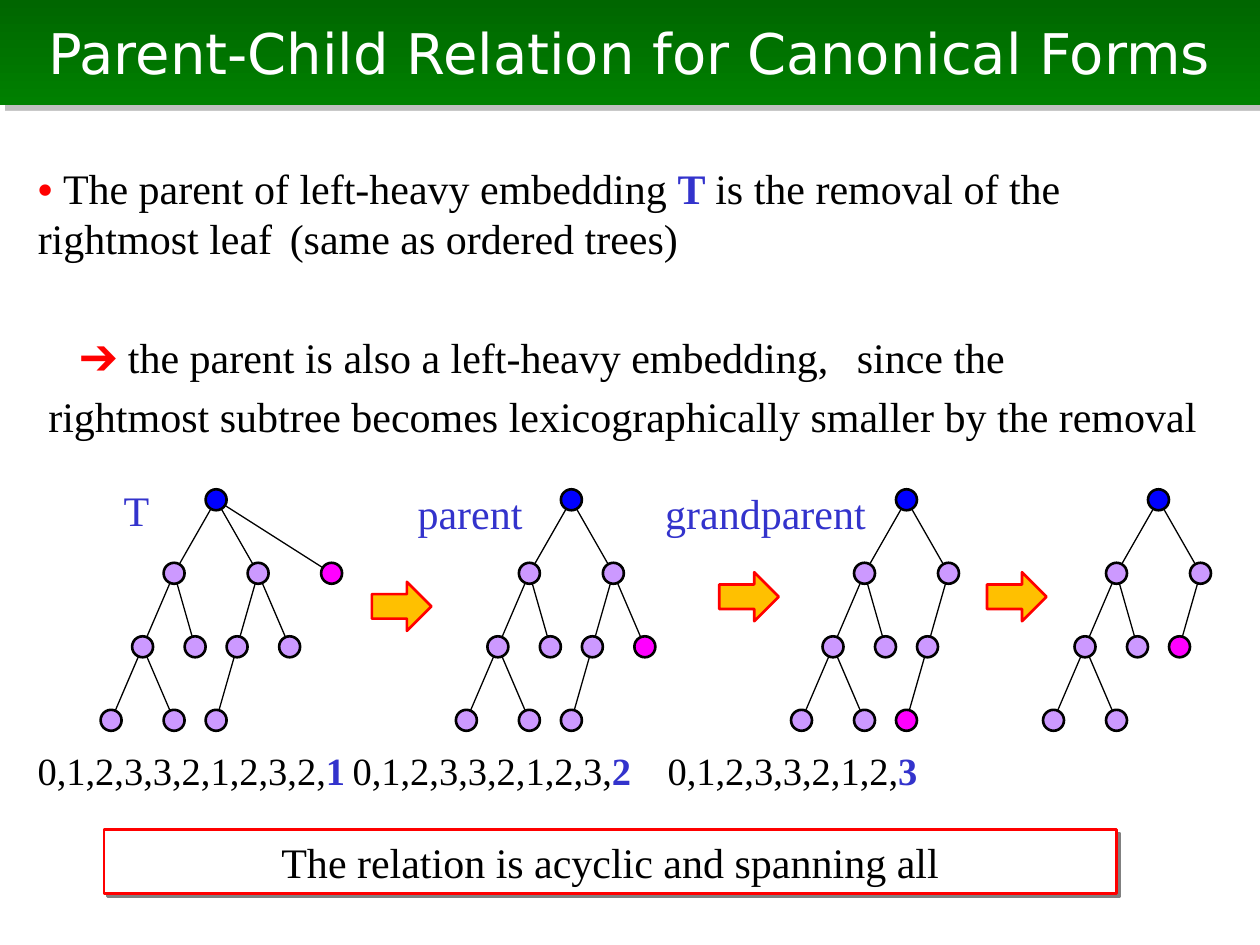
from lxml.etree import SubElement
from pptx import Presentation
from pptx.dml.color import RGBColor
from pptx.enum.shapes import MSO_CONNECTOR, MSO_SHAPE
from pptx.enum.text import MSO_ANCHOR, MSO_AUTO_SIZE, PP_ALIGN
from pptx.oxml.ns import qn
from pptx.util import Pt

BLACK, BLUE, RED, WHITE = "000000", "3333CC", "FF0000", "FFFFFF"
ROOT, NODE, LAST = "0000FF", "CC99FF", "FF00FF"
DEPTHS = [0, 1, 2, 3, 3, 2, 1, 2, 3, 2, 1]
SHIFTS = [0, -24, -42, -60, -24, -12, 24, 12, 0, 42, 66]
TREES = [(123.5, 11), (326.5, 10), (518, 9), (662, 8)]
LABELS = [("T", 63.5, 273.5, 29), ("parent", 231.5, 275, 74), ("grandparent", 373, 275, 129)]
ARROWS = [(212.5, 332.5), (411, 327), (564, 327)]


def tint(color, code):
    """Set a colour from a hex string."""
    color.rgb = RGBColor.from_string(code)


def apply(target, values):
    """Set each value of a dict as an attribute."""
    for name, value in values.items():
        setattr(target, name, value)


class Deck:
    """Holds the style and the current slide."""

    face = "Times New Roman"
    frame = {"word_wrap": True, "auto_size": MSO_AUTO_SIZE.NONE,
             "vertical_anchor": MSO_ANCHOR.TOP}

    def __init__(self):
        """Start a deck with one title slide."""
        self.show = Presentation()
        apply(self.show, {"slide_width": Pt(720), "slide_height": Pt(540)})
        self.slide = self.show.slides.add_slide(self.show.slide_layouts[0])
        self.shapes = self.slide.shapes

    def place(self, shape, box):
        """Move a shape to left, top, width, height."""
        apply(shape, dict(zip(("left", "top", "width", "height"), map(Pt, box))))

    def shade(self, shape, dist, alpha):
        """Give a shape a hard grey shadow."""
        shape.shadow.inherit = False
        effects = shape._element.spPr.find(qn("a:effectLst"))
        outer = SubElement(effects, qn("a:outerShdw"), dist=str(Pt(dist)),
                           dir="2700000", algn="ctr", rotWithShape="0")
        grey = SubElement(outer, qn("a:srgbClr"), val="808080")
        SubElement(grey, qn("a:alpha"), val=str(alpha * 1000))

    def letter(self, para, runs, size=24, face=None, align=PP_ALIGN.LEFT,
               before=0, indent=0, tabs=()):
        """Fill a paragraph with runs of text, colour and weight."""
        apply(para, {"alignment": align, "space_before": Pt(before)})
        props = para._p.get_or_add_pPr()
        props.set("marL", "0")
        props.set("indent", str(Pt(indent)))
        if tabs:
            stops = SubElement(props, qn("a:tabLst"))
            for stop in tabs:
                SubElement(stops, qn("a:tab"), pos=str(Pt(stop)), algn="l")
        for text, code, bold in runs:
            run = para.add_run()
            run.text = text
            apply(run.font, {"size": Pt(size), "name": face or self.face, "bold": bold})
            tint(run.font.color, code)

    def title(self, text, box):
        """Put the title on a green band."""
        shape = self.shapes.title
        self.place(shape, box)
        shape.fill.gradient()
        shape.fill.gradient_angle = 270
        for stop, code in zip(shape.fill.gradient_stops, ("006600", "008000")):
            tint(stop.color, code)
        self.shade(shape, 4.2, 50)
        apply(shape.text_frame, {**self.frame, "vertical_anchor": MSO_ANCHOR.MIDDLE})
        self.letter(shape.text_frame.paragraphs[0], [(text, WHITE, False)], 32,
                    "DejaVu Sans", PP_ALIGN.CENTER)

    def body(self, items, box):
        """Put the list in the body placeholder."""
        shape = self.slide.placeholders[1]
        self.place(shape, box)
        apply(shape.text_frame, self.frame)
        for i, (runs, style) in enumerate(items):
            para = shape.text_frame.add_paragraph() if i else shape.text_frame.paragraphs[0]
            self.letter(para, runs, **style)

    def text(self, runs, box, wrap=True, **style):
        """Add a text box."""
        frame = self.shapes.add_textbox(*map(Pt, box)).text_frame
        apply(frame, {**self.frame, "word_wrap": wrap})
        self.letter(frame.paragraphs[0], runs, **style)

    def shape(self, kind, box, fill, line):
        """Add a filled shape with an outline."""
        shape = self.shapes.add_shape(kind, *map(Pt, box))
        shape.shadow.inherit = False
        shape.fill.solid()
        tint(shape.fill.fore_color, fill)
        shape.line.width = Pt(1.5)
        tint(shape.line.color, line)
        return shape

    def note(self, text, box):
        """Add a framed note with a shadow."""
        shape = self.shape(MSO_SHAPE.RECTANGLE, box, WHITE, RED)
        self.shade(shape, 2.8, 100)
        apply(shape.text_frame, {**self.frame, "vertical_anchor": MSO_ANCHOR.MIDDLE})
        self.letter(shape.text_frame.paragraphs[0], [(text, BLACK, False)],
                    align=PP_ALIGN.CENTER)

    def edge(self, start, end):
        """Add a thin line between two points."""
        line = self.shapes.add_connector(MSO_CONNECTOR.STRAIGHT, *map(Pt, start + end))
        line.line.width = Pt(0.75)
        tint(line.line.color, BLACK)
        SubElement(line._element.spPr, qn("a:effectLst"))

    def tree(self, left, count):
        """Draw the first nodes of the depth code as a tree."""
        spots, branch = [], {}
        for depth, shift in zip(DEPTHS[:count], SHIFTS):
            branch[depth] = (left + shift, 285.6 + 42 * depth)
            spots.append(branch[depth])
            if depth:
                self.edge(branch[depth - 1], branch[depth])
        fills = [ROOT] + [NODE] * (count - 2) + [LAST]
        for (x, y), fill in zip(spots, fills):
            self.shape(MSO_SHAPE.OVAL, (x - 6, y - 6, 12, 12), fill, BLACK)


def main():
    """Build the slide and save it."""
    deck = Deck()
    deck.title("Parent-Child Relation for Canonical Forms", (0, 0, 720, 60))
    deck.body([
        ([("• ", RED, True), ("The parent of left-heavy embedding ", BLACK, False),
          ("T ", BLUE, True),
          ("is the removal of the rightmost leaf\t(same as ordered trees)", BLACK, False)],
         {"before": 5, "tabs": [158]}),
        ([("➔ ", RED, True),
          ("the parent is also a left-heavy embedding,\tsince the", BLACK, False)],
         {"before": 39, "indent": 24, "tabs": [479.5]}),
        ([("rightmost subtree becomes lexicographically smaller by the removal",
           BLACK, False)], {"before": 5, "indent": 6}),
    ], (14.4, 89.3, 692, 436))

    for left, count in TREES:
        deck.tree(left, count)
    for label, left, top, width in LABELS:
        deck.text([(label, BLUE, False)], (left, top, width, 36), wrap=False)

    codes = []
    for i, (_, count) in enumerate(TREES[:3]):
        head = "".join(f"{depth}," for depth in DEPTHS[:count - 1])
        codes += [("\t" * (i > 0) + head, BLACK, False),
                  (str(DEPTHS[count - 1]), BLUE, True)]
    deck.text(codes, (14.4, 423.4, 690, 34), size=22, tabs=[219, 406])

    deck.note("The relation is acyclic and spanning all", (59.5, 474, 578.5, 36.5))
    for left, top in ARROWS:
        deck.shape(MSO_SHAPE.RIGHT_ARROW, (left, top, 34, 28), "FFC000", RED)
    deck.show.save("out.pptx")


if __name__ == "__main__":
    main()
